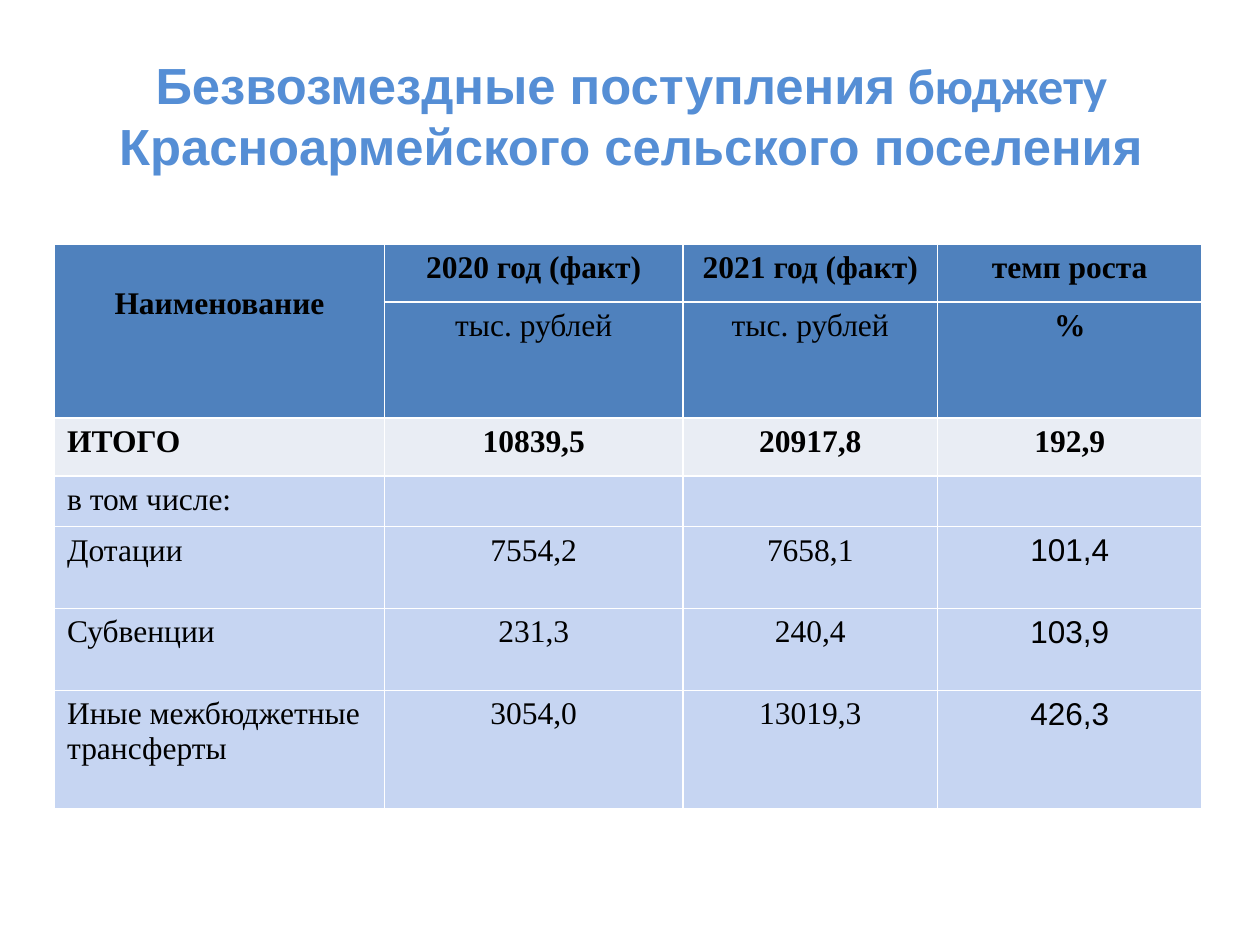
from dataclasses import dataclass

from lxml.etree import SubElement
from pptx import Presentation
from pptx.dml.color import RGBColor
from pptx.enum.text import MSO_ANCHOR, PP_ALIGN
from pptx.oxml.ns import qn
from pptx.util import Cm, Pt


@dataclass(frozen=True)
class Theme:
    title_color: str = "558ED5"
    text_color: str = "000000"
    header_fill: str = "4F81BD"
    total_fill: str = "E9EDF4"
    body_fill: str = "C6D5F2"
    border_color: str = "FFFFFF"
    border_width: int = 1
    title_size: int = 29
    table_size: int = 18
    sans: str = "Arial"
    title_accent: str = "Calibri"
    serif: str = "Times New Roman"


def add_text(paragraph, text, *, font, size, color, bold=False, align=PP_ALIGN.LEFT):
    paragraph.alignment = align
    run = paragraph.add_run()
    run.text = text
    run.font.name = font
    run.font.size = Pt(size)
    run.font.bold = bold
    run.font.color.rgb = RGBColor.from_string(color)


def set_borders(cell, color, width):
    """Draw all four cell edges; call before the fill, which must follow them."""
    properties = cell._tc.get_or_add_tcPr()
    for edge in ("a:lnL", "a:lnR", "a:lnT", "a:lnB"):
        line = SubElement(properties, qn(edge), w=str(Pt(width)))
        fill = SubElement(line, qn("a:solidFill"))
        SubElement(fill, qn("a:srgbClr"), val=color)


class SlideBuilder:
    def __init__(self, slide, theme):
        self.slide = slide
        self.theme = theme

    def title(self, parts, left, top, width, height):
        """Add a centred title from (text, font) parts."""
        box = self.slide.shapes.add_textbox(Cm(left), Cm(top), Cm(width), Cm(height))
        frame = box.text_frame
        frame.word_wrap = True
        frame.vertical_anchor = MSO_ANCHOR.MIDDLE
        for text, font in parts:
            add_text(frame.paragraphs[0], text, font=font, size=self.theme.title_size,
                     color=self.theme.title_color, bold=True, align=PP_ALIGN.CENTER)

    def table(self, rows, left, top, column_widths, row_heights):
        shape = self.slide.shapes.add_table(
            len(rows), len(column_widths), Cm(left), Cm(top),
            Cm(sum(column_widths)), Cm(sum(row_heights)))
        table = shape.table
        for column, width in zip(table.columns, column_widths):
            column.width = Cm(width)
        for row, height in zip(table.rows, row_heights):
            row.height = Cm(height)
        for row_index, values in enumerate(rows):
            for column_index, value in enumerate(values):
                self.cell(table.cell(row_index, column_index), value, row_index, column_index)
        heading = table.cell(0, 0)
        heading.merge(table.cell(1, 0))
        heading.margin_top = Cm(0.84)

    def cell(self, cell, value, row, column):
        theme = self.theme
        is_header, is_total = row < 2, row == 2
        is_body = not (is_header or is_total)
        set_borders(cell, theme.border_color, theme.border_width)
        fill = (theme.header_fill if is_header
                else theme.total_fill if is_total else theme.body_fill)
        cell.fill.solid()
        cell.fill.fore_color.rgb = RGBColor.from_string(fill)
        add_text(cell.text_frame.paragraphs[0], value,
                 font=theme.sans if is_body and column == 3 else theme.serif,
                 size=theme.table_size, color=theme.text_color,
                 bold=row in (0, 2) or value == "%",
                 align=PP_ALIGN.CENTER if is_header or column else PP_ALIGN.LEFT)


REVENUE_ROWS = [
    ("Наименование", "2020 год (факт)", "2021 год (факт)", "темп роста"),
    ("", "тыс. рублей", "тыс. рублей", "%"),
    ("ИТОГО", "10839,5", "20917,8", "192,9"),
    ("в том числе:", "", "", ""),
    ("Дотации", "7554,2", "7658,1", "101,4"),
    ("Субвенции", "231,3", "240,4", "103,9"),
    ("Иные межбюджетные трансферты", "3054,0", "13019,3", "426,3"),
]


def main():
    presentation = Presentation()
    presentation.slide_width, presentation.slide_height = Cm(25.4), Cm(19.05)
    slide = presentation.slides.add_slide(presentation.slide_layouts[6])
    theme = Theme()
    builder = SlideBuilder(slide, theme)
    builder.title([
        ("Безвозмездные поступления", theme.sans),
        (" бюджету ", theme.title_accent),
        ("Красноармейского сельского поселения", theme.sans),
    ], left=1.3, top=0.92, width=22.86, height=2.8)
    builder.table(REVENUE_ROWS, left=1.1, top=4.93,
                  column_widths=[6.65, 6.02, 5.13, 5.33],
                  row_heights=[1.16, 2.34, 1.17, 0.97, 1.65, 1.65, 2.39])
    presentation.save("out.pptx")


if __name__ == "__main__":
    main()
